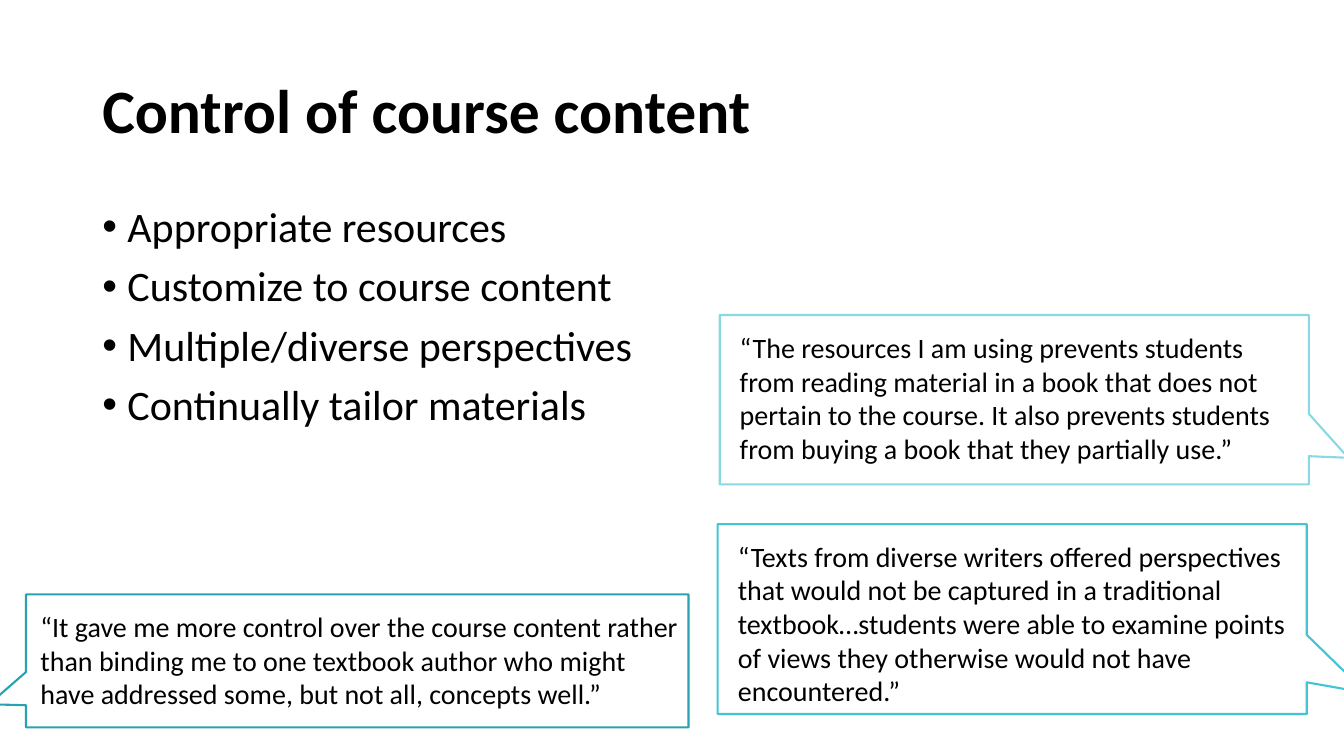
from pptx import Presentation
from pptx import util as u
from pptx.dml.color import RGBColor
from pptx.enum import shapes, text
from pptx.oxml import parse_xml
from pptx.oxml.ns import nsdecls

Pt = u.Pt


def color(code):
    return RGBColor.from_string(code)


def write(box, lines, size, bold=False):
    """Add a wrapped text box and return its text frame."""
    frame = slide.shapes.add_textbox(*map(Pt, box)).text_frame
    frame.word_wrap = True
    for i, line in enumerate(lines):
        para = frame.paragraphs[0] if i == 0 else frame.add_paragraph()
        run = para.add_run()
        run.text = line
        run.font.name = "Calibri"
        run.font.size = Pt(size)
        run.font.bold = bold
        run.font.color.rgb = color("000000")
    return frame


deck = Presentation()
deck.slide_width, deck.slide_height = Pt(960), Pt(540)
slide = deck.slides.add_slide(deck.slide_layouts[6])

title = write((66, 28.75, 828, 104.4), ["Control of course content"], 44, True)
title.vertical_anchor = text.MSO_ANCHOR.MIDDLE
title.paragraphs[0].line_spacing = 0.9

points = [
    "Appropriate resources",
    "Customize to course content",
    "Multiple/diverse perspectives",
    "Continually tailor materials",
]
body = write((66, 143.75, 446, 262), points, 30)
for para in body.paragraphs:
    para.line_spacing = 0.9
    para.space_before = Pt(10)
    props = para._p.get_or_add_pPr()
    props.set("marL", str(Pt(18)))
    props.set("indent", str(Pt(-18)))
    props.append(parse_xml(f'<a:buFont {nsdecls("a")} typeface="Arial"/>'))
    props.append(parse_xml(f'<a:buChar {nsdecls("a")} char="•"/>'))

# Each quote: text, text box, callout box, tail tip, outline
quotes = [
    ("“The resources I am using prevents students from reading material in a "
     "book that does not pertain to the course. It also prevents students "
     "from buying a book that they partially use.”",
     (521.3, 232.6, 414, 104.4), (514.1, 225, 420.8, 121),
     (0.567, 0.343), "88D9E4"),
    ("“Texts from diverse writers offered perspectives that would not be "
     "captured in a traditional textbook…students were able to examine "
     "points of views they otherwise would not have encountered.”",
     (520, 381.6, 422.6, 128.2), (512.6, 374.4, 420.8, 135.6),
     (0.601, 0.389), "43C4D5"),
    ("“It gave me more control over the course content rather than binding "
     "me to one textbook author who might have addressed some, but not all, "
     "concepts well.”",
     (21.8, 432, 471.6, 80), (18.6, 424.6, 473.2, 95),
     (-0.556, 0.326), "28A2B2"),
]
for quote, box, frame, tip, tint in quotes:
    write(box, [quote], 20)
    bubble = slide.shapes.add_shape(
        shapes.MSO_SHAPE.RECTANGULAR_CALLOUT, *map(Pt, frame))
    bubble.shadow.inherit = False
    bubble.adjustments[0], bubble.adjustments[1] = tip
    bubble.fill.background()
    bubble.line.color.rgb = color(tint)
    bubble.line.width = Pt(1.5)

deck.save("out.pptx")
